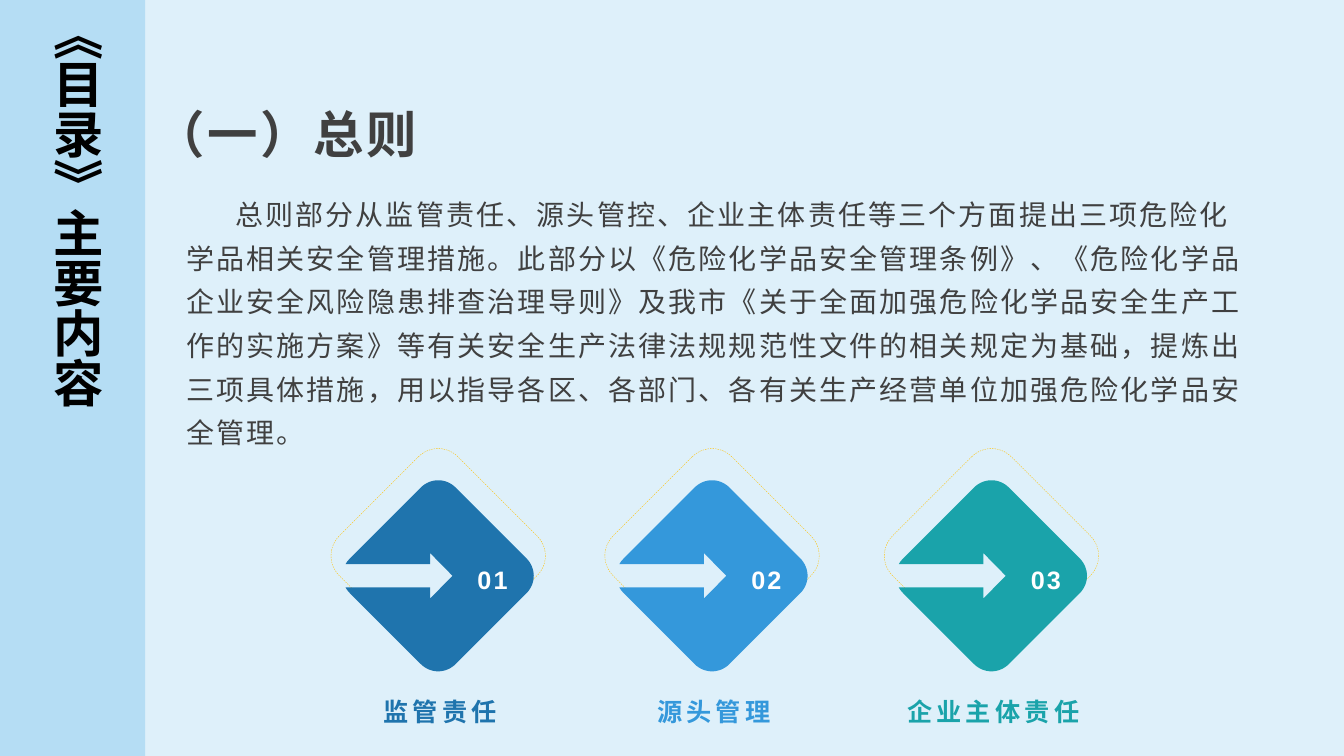
import pptx
import pptx.util
import pptx.dml.color
import pptx.enum.dml
import pptx.enum.lang
import pptx.enum.shapes
import pptx.enum.text
import pptx.oxml.ns
import lxml.etree
from dataclasses import dataclass

Pt = pptx.util.Pt
Align = pptx.enum.text.PP_ALIGN
Anchor = pptx.enum.text.MSO_ANCHOR
Shape = pptx.enum.shapes.MSO_SHAPE

# Content
SIDE = "《目录》主要内容"
TITLE = "（一）总则"
BODY = (
    "总则部分从监管责任、源头管控、企业主体责任等三个方面提出三项危险化学品相关安全管理措施。"
    "此部分以《危险化学品安全管理条例》、《危险化学品企业安全风险隐患排查治理导则》"
    "及我市《关于全面加强危险化学品安全生产工作的实施方案》等有关安全生产法律法规规范性文件的"
    "相关规定为基础，提炼出三项具体措施，用以指导各区、各部门、各有关生产经营单位"
    "加强危险化学品安全管理。"
)
# Number, label, colour, centre across
DUTIES = [
    ("01", "监管责任", "1F74AD", 313),
    ("02", "源头管理", "3498DB", 508.6),
    ("03", "企业主体责任", "1AA3AA", 708.2),
]


@dataclass
class Theme:
    font: str = "Arial"
    back: str = "DEF0FA"
    band: str = "B5DDF4"
    text: str = "404040"
    black: str = "000000"
    white: str = "FFFFFF"
    gold: str = "FFC000"
    head: float = 36
    body: float = 20
    label: float = 18


theme = Theme()

# Diamond geometry, measured from its centre
MID = 411.3
NEAR, FAR, PULL = 12.5, 63, 70
NOTCH = [(-63, 12.5), (-65, 10.2), (-66.2, 8.3), (-5.8, 8.3), (-5.8, 16.3),
         (10.2, 0), (-5.8, -16.3), (-5.8, -8.3), (-66.2, -8.3),
         (-65, -10.2), (-63, -12.5)]


def rgb(code):
    return pptx.dml.color.RGBColor.from_string(code)


def paint(shape, code):
    shape.shadow.inherit = False
    shape.fill.solid()
    shape.fill.fore_color.rgb = rgb(code)
    shape.line.fill.background()


def write(shape, text, size, code, bold=True, gap=0, align=Align.LEFT,
          lead=None, after=0, anchor=Anchor.TOP, wrap=True):
    frame = shape.text_frame
    frame.auto_size = pptx.enum.text.MSO_AUTO_SIZE.NONE
    frame.word_wrap = wrap
    frame.vertical_anchor = anchor
    para = frame.paragraphs[0]
    para.alignment = align
    para.space_before, para.space_after = Pt(0), Pt(after)
    if lead:
        para.line_spacing = lead
    run = para.add_run()
    run.text = text
    font = run.font
    font.name, font.size, font.bold = theme.font, Pt(size), bold
    font.color.rgb = rgb(code)
    font.language_id = pptx.enum.lang.MSO_LANGUAGE_ID.SIMPLIFIED_CHINESE
    # Letter spacing and the East Asian font
    props = run.font._element
    props.set("spc", str(int(gap * 100)))
    face = lxml.etree.SubElement(props, pptx.oxml.ns.qn("a:ea"))
    face.set("typeface", theme.font)
    return para


def box(slide, left, top, width, height):
    return slide.shapes.add_textbox(Pt(left), Pt(top), Pt(width), Pt(height))


def curve(steps=16):
    """Points of the rounded top corner."""
    for i in range(steps + 1):
        t = i / steps
        a, b, c, d = (1 - t) ** 3, 3 * t * (1 - t) ** 2, 3 * t * t * (1 - t), t ** 3
        yield (NEAR * (d - a) + (PULL - FAR - NEAR) * (b - c),
               -FAR * (a + d) - PULL * (b + c))


def diamond(slide, mid, code):
    top = list(curve())
    right = [(-y, x) for x, y in top]
    base = [(-x, -y) for x, y in top]
    dots = [(Pt(mid + x), Pt(MID + y)) for x, y in top + right + base + NOTCH]
    build = slide.shapes.build_freeform(*dots[0], scale=1.0)
    build.add_line_segments(dots[1:], close=True)
    paint(build.convert_to_shape(), code)


def duty(slide, mark, label, code, mid):
    # Dashed outline
    frame = slide.shapes.add_shape(
        Shape.ROUNDED_RECTANGLE, Pt(mid - 60), Pt(337), Pt(120), Pt(120))
    frame.rotation = 45
    frame.shadow.inherit = False
    frame.fill.background()
    frame.line.color.rgb = rgb(theme.gold)
    frame.line.width = Pt(0.25)
    frame.line.dash_style = pptx.enum.dml.MSO_LINE.DASH
    # Diamond with arrow notch, number and label
    diamond(slide, mid, code)
    write(box(slide, mid + 21, 393, 41, 36), mark, theme.label, theme.white,
          gap=1.5, lead=1.3, wrap=False)
    name = box(slide, mid - 74, 484.5, 150.5, 39)
    name.text_frame.margin_bottom = 0
    write(name, label, theme.label, code, gap=3, align=Align.CENTER,
          lead=1.2, anchor=Anchor.MIDDLE)


def main():
    deck = pptx.Presentation()
    deck.slide_width, deck.slide_height = Pt(960), Pt(540)
    slide = deck.slides.add_slide(deck.slide_layouts[5])
    slide.background.fill.solid()
    slide.background.fill.fore_color.rgb = rgb(theme.back)

    # Title
    title = slide.shapes.title
    title.left, title.top = Pt(103), Pt(60.5)
    title.width, title.height = Pt(312), Pt(69)
    write(title, TITLE, theme.head, theme.text, gap=2, anchor=Anchor.MIDDLE)

    # Body, with its first line indented
    para = write(box(slide, 126, 130.3, 773.3, 232), BODY, theme.body, theme.text,
                 bold=False, gap=1.5, lead=1.3, after=10)
    para._p.get_or_add_pPr().set("indent", str(Pt(35)))

    # Side band with vertical text
    band = slide.shapes.add_shape(Shape.RECTANGLE, 0, 0, Pt(103.7), Pt(540))
    paint(band, theme.band)
    write(band, SIDE, theme.head, theme.black, gap=-0.5, lead=0.9, after=8,
          anchor=Anchor.MIDDLE)
    band.text_frame._txBody.bodyPr.set("vert", "eaVert")

    # Three duties
    for item in DUTIES:
        duty(slide, *item)

    deck.save("out.pptx")


if __name__ == "__main__":
    main()
